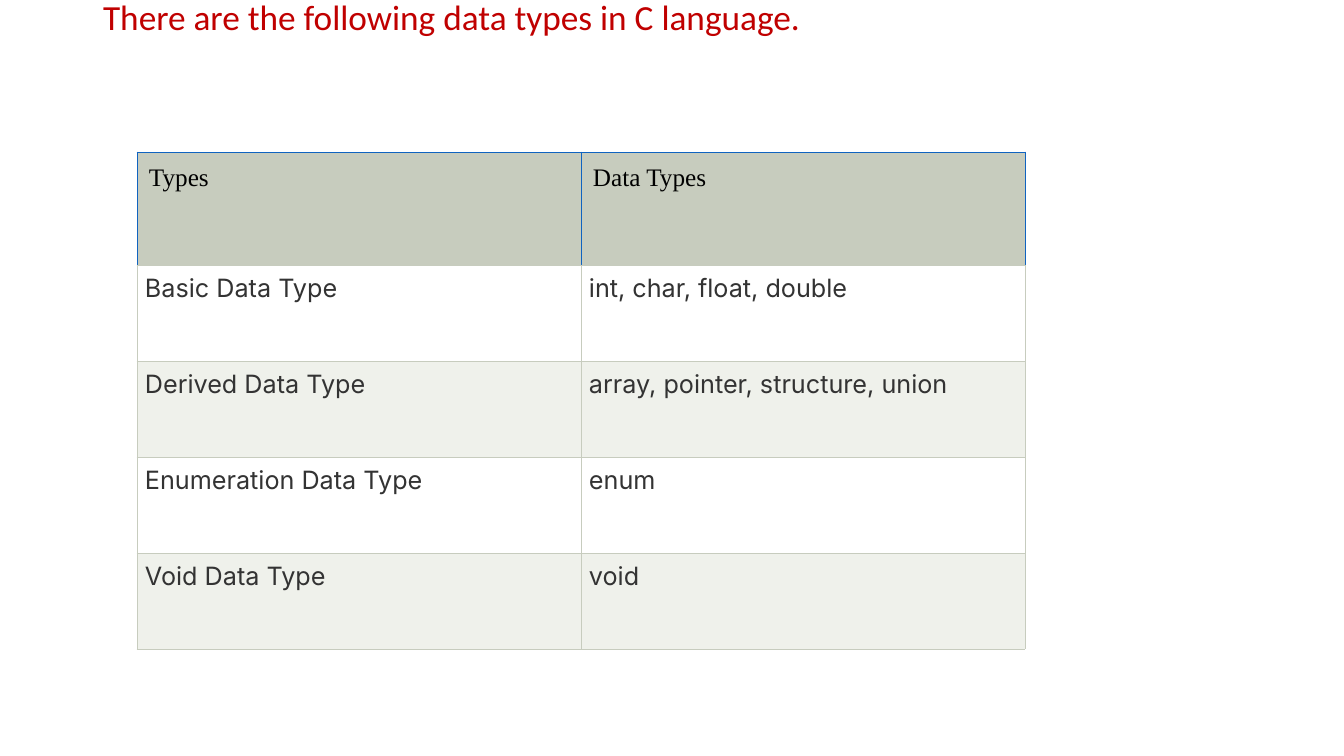
from lxml.etree import SubElement
from pptx import Presentation
from pptx.dml.color import RGBColor
from pptx.enum.text import MSO_ANCHOR, PP_ALIGN
from pptx.oxml.ns import qn
from pptx.util import Pt

# Content
HEADING = "There are the following data types in C language."
DATA_TYPES = [
    ("Types", "Data Types"),
    ("Basic Data Type", "int, char, float, double"),
    ("Derived Data Type", "array, pointer, structure, union"),
    ("Enumeration Data Type", "enum"),
    ("Void Data Type", "void"),
]

# Colours
RED = RGBColor(0xC0, 0x00, 0x00)
BLACK = RGBColor(0x00, 0x00, 0x00)
CHARCOAL = RGBColor(0x33, 0x33, 0x33)
WHITE = RGBColor(0xFF, 0xFF, 0xFF)
SAGE = RGBColor(0xC7, 0xCC, 0xBE)
PALE_SAGE = RGBColor(0xEF, 0xF1, 0xEB)
BLUE = RGBColor(0x10, 0x63, 0xC0)

# Layout in px
SLIDE_W, SLIDE_H = 1344, 756
HEADING_BOX = (93, 0, 1159, 75)
TABLE_LEFT, TABLE_TOP = 137, 152
COLUMN_W, HEADER_H, ROW_H = 444, 113, 96
HEADER_INSET, BODY_INSET = 12, 8


def px(length):
    return round(length * 914400 / 100.8)


def add_text(paragraph, text, font_name, size, color):
    run = paragraph.add_run()
    run.text = text
    run.font.name = font_name
    run.font.size = Pt(size)
    run.font.color.rgb = color


def set_borders(cell, colors):
    """Draw the left, right, top and bottom borders, in that order."""
    properties = cell._tc.get_or_add_tcPr()
    for index, (side, color) in enumerate(zip("LRTB", colors)):
        line = SubElement(properties, qn(f"a:ln{side}"), w=str(Pt(0.75)))
        fill = SubElement(line, qn("a:solidFill"))
        SubElement(fill, qn("a:srgbClr"), val=str(color))
        properties.insert(index, line)


def fill_cell(cell, text, is_header, background):
    cell.fill.solid()
    cell.fill.fore_color.rgb = background
    inset = px(HEADER_INSET if is_header else BODY_INSET)
    cell.margin_left = cell.margin_right = inset
    cell.margin_top = cell.margin_bottom = inset
    paragraph = cell.text_frame.paragraphs[0]
    if is_header:
        add_text(paragraph, text, "Times New Roman", 18, BLACK)
        set_borders(cell, (BLUE, BLUE, BLUE, SAGE))
    else:
        paragraph.alignment = PP_ALIGN.JUSTIFY
        add_text(paragraph, text, "Inter", 18, CHARCOAL)
        set_borders(cell, (SAGE,) * 4)


def main():
    deck = Presentation()
    deck.slide_width, deck.slide_height = px(SLIDE_W), px(SLIDE_H)
    slide = deck.slides.add_slide(deck.slide_layouts[5])

    # Heading
    heading = slide.shapes.title
    heading.left, heading.top, heading.width, heading.height = map(px, HEADING_BOX)
    frame = heading.text_frame
    frame.vertical_anchor = MSO_ANCHOR.TOP
    frame.margin_top = 0
    heading_line = frame.paragraphs[0]
    heading_line.alignment = PP_ALIGN.LEFT
    heading_line.line_spacing = 0.9
    add_text(heading_line, HEADING, "Calibri", 25.2, RED)

    # Table of data types
    heights = [HEADER_H] + [ROW_H] * (len(DATA_TYPES) - 1)
    columns = len(DATA_TYPES[0])
    table = slide.shapes.add_table(
        len(DATA_TYPES), columns, px(TABLE_LEFT), px(TABLE_TOP),
        px(COLUMN_W * columns), px(sum(heights))).table
    for column in table.columns:
        column.width = px(COLUMN_W)
    for index, (texts, height) in enumerate(zip(DATA_TYPES, heights)):
        table.rows[index].height = px(height)
        is_header = index == 0
        background = SAGE if is_header else WHITE if index % 2 else PALE_SAGE
        for column, text in enumerate(texts):
            fill_cell(table.cell(index, column), text, is_header, background)

    deck.save("out.pptx")


if __name__ == "__main__":
    main()
